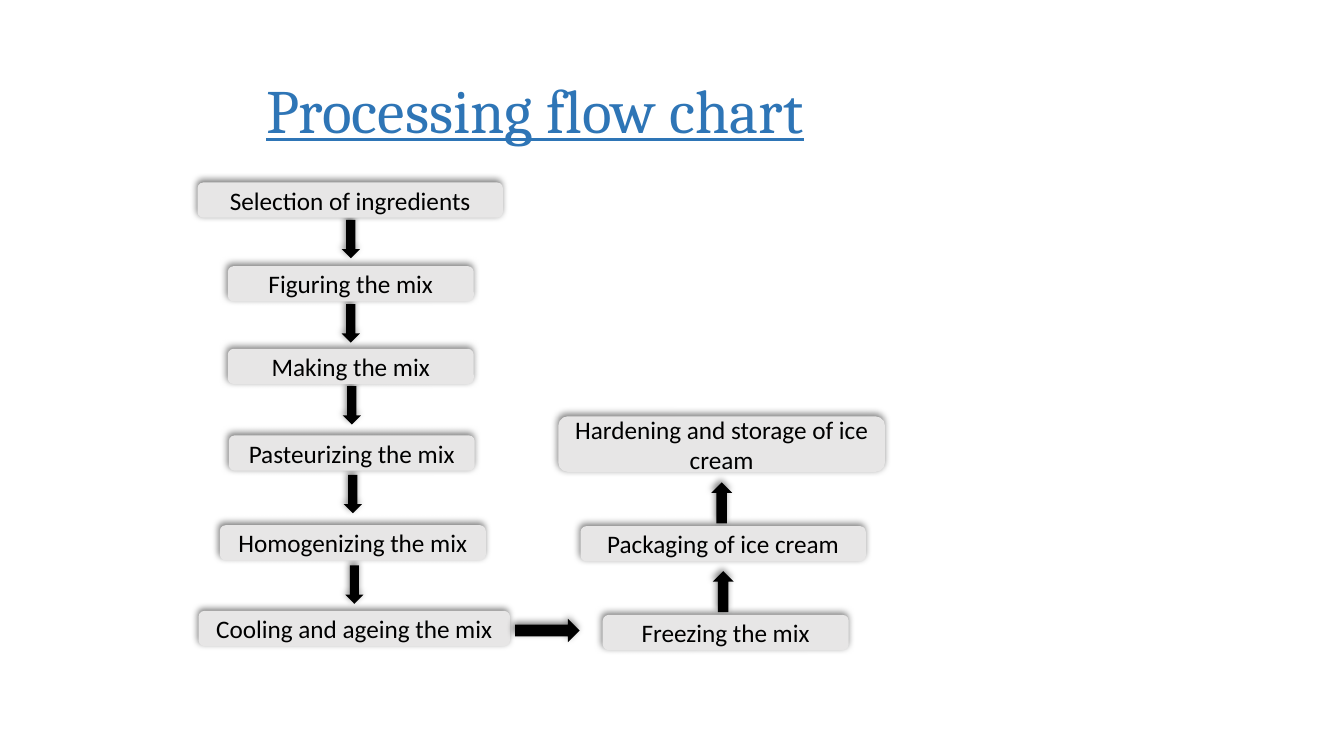
from dataclasses import dataclass

from lxml.etree import SubElement
from pptx import Presentation
from pptx.dml.color import RGBColor
from pptx.enum.shapes import MSO_SHAPE
from pptx.enum.text import MSO_ANCHOR, PP_ALIGN
from pptx.oxml.ns import qn
from pptx.util import Pt


@dataclass(frozen=True)
class Theme:
    title_color: RGBColor = RGBColor(0x2E, 0x75, 0xB6)
    box_color: RGBColor = RGBColor(0xE7, 0xE6, 0xE6)
    ink: RGBColor = RGBColor(0, 0, 0)
    title_font: str = "Cambria"
    body_font: str = "Calibri"
    title_size: int = 44
    body_size: int = 18


@dataclass(frozen=True)
class Step:
    label: str
    center: float
    top: float
    width: float
    arrow_gap: float = 2
    height: float = 25.2


THEME = Theme()

MIX_STEPS = [
    Step("Selection of ingredients", 109.2, 0, 218.2, 1.5),
    Step("Figuring the mix", 109.6, 59.8, 175.7),
    Step("Making the mix", 109.6, 118.8, 175.7, 1.5),
    Step("Pasteurizing the mix", 110.3, 180.7, 175.7, 3),
    Step("Homogenizing the mix", 111, 244.8, 190, 3.6),
    Step("Cooling and ageing the mix", 112.1, 306, 222.5),
]
FINISHING_STEPS = [
    Step("Freezing the mix", 119.5, 141.8, 175.7),
    Step("Packaging of ice cream", 117.7, 78.4, 203.8),
    Step("Hardening and storage of ice cream", 116.6, 0, 233.3, height=39.6),
]


def add_shadowed_shape(slide, kind, left, top, width, height, color):
    shape = slide.shapes.add_shape(kind, Pt(left), Pt(top), Pt(width), Pt(height))
    shape.fill.solid()
    shape.fill.fore_color.rgb = color
    shape.line.fill.background()
    shape.shadow.inherit = False
    effects = shape.element.spPr.find(qn("a:effectLst"))
    shadow = SubElement(
        effects, qn("a:outerShdw"), blurRad=str(Pt(5)), dist=str(Pt(2)),
        dir=str(245 * 60000), algn="ctr", rotWithShape="0",
    )
    shadow_color = SubElement(shadow, qn("a:srgbClr"), val=str(THEME.ink))
    SubElement(shadow_color, qn("a:alpha"), val="50000")
    return shape


def add_title(slide, left, top, width, height):
    title = slide.shapes.title
    title.left, title.top = Pt(left), Pt(top)
    title.width, title.height = Pt(width), Pt(height)
    title.text_frame.text = "Processing flow chart"
    title.text_frame.vertical_anchor = MSO_ANCHOR.MIDDLE
    paragraph = title.text_frame.paragraphs[0]
    paragraph.alignment = PP_ALIGN.LEFT
    paragraph.line_spacing = 0.9
    font = paragraph.runs[0].font
    font.name = THEME.title_font
    font.size = Pt(THEME.title_size)
    font.color.rgb = THEME.title_color
    font.underline = True


def add_step(slide, step, left, top):
    shape = add_shadowed_shape(
        slide, MSO_SHAPE.ROUNDED_RECTANGLE, left + step.center - step.width / 2,
        top + step.top, step.width, step.height, THEME.box_color,
    )
    text_frame = shape.text_frame
    text_frame.text = step.label
    text_frame.word_wrap = True
    text_frame.vertical_anchor = MSO_ANCHOR.MIDDLE
    paragraph = text_frame.paragraphs[0]
    paragraph.alignment = PP_ALIGN.CENTER
    font = paragraph.runs[0].font
    font.name = THEME.body_font
    font.size = Pt(THEME.body_size)
    font.color.rgb = THEME.ink


def add_column(slide, steps, left, top, kind, arrow_width, arrow_height):
    for step, following in zip(steps, steps[1:]):
        if kind == MSO_SHAPE.DOWN_ARROW:
            arrow_top = step.top + step.height + step.arrow_gap
        else:
            arrow_top = step.top - step.arrow_gap - arrow_height
        add_shadowed_shape(
            slide, kind, left + following.center - arrow_width / 2,
            top + arrow_top, arrow_width, arrow_height, THEME.ink,
        )
    for step in steps:
        add_step(slide, step, left, top)


def add_flow_chart(slide, left, top):
    add_column(slide, MIX_STEPS, left, top, MSO_SHAPE.DOWN_ARROW, 13, 27.4)
    add_column(
        slide, FINISHING_STEPS, left + 257.9, top + 167.1,
        MSO_SHAPE.UP_ARROW, 14.8, 29.2,
    )
    add_shadowed_shape(
        slide, MSO_SHAPE.RIGHT_ARROW, left + 226.9, top + 311.8, 46.1, 16.6, THEME.ink
    )


def main():
    presentation = Presentation()
    presentation.slide_width, presentation.slide_height = Pt(960), Pt(540)
    slide = presentation.slides.add_slide(presentation.slide_layouts[5])
    add_title(slide, 182.9, 28.8, 711.4, 104.4)
    add_flow_chart(slide, 141, 130.3)
    presentation.save("out.pptx")


if __name__ == "__main__":
    main()
